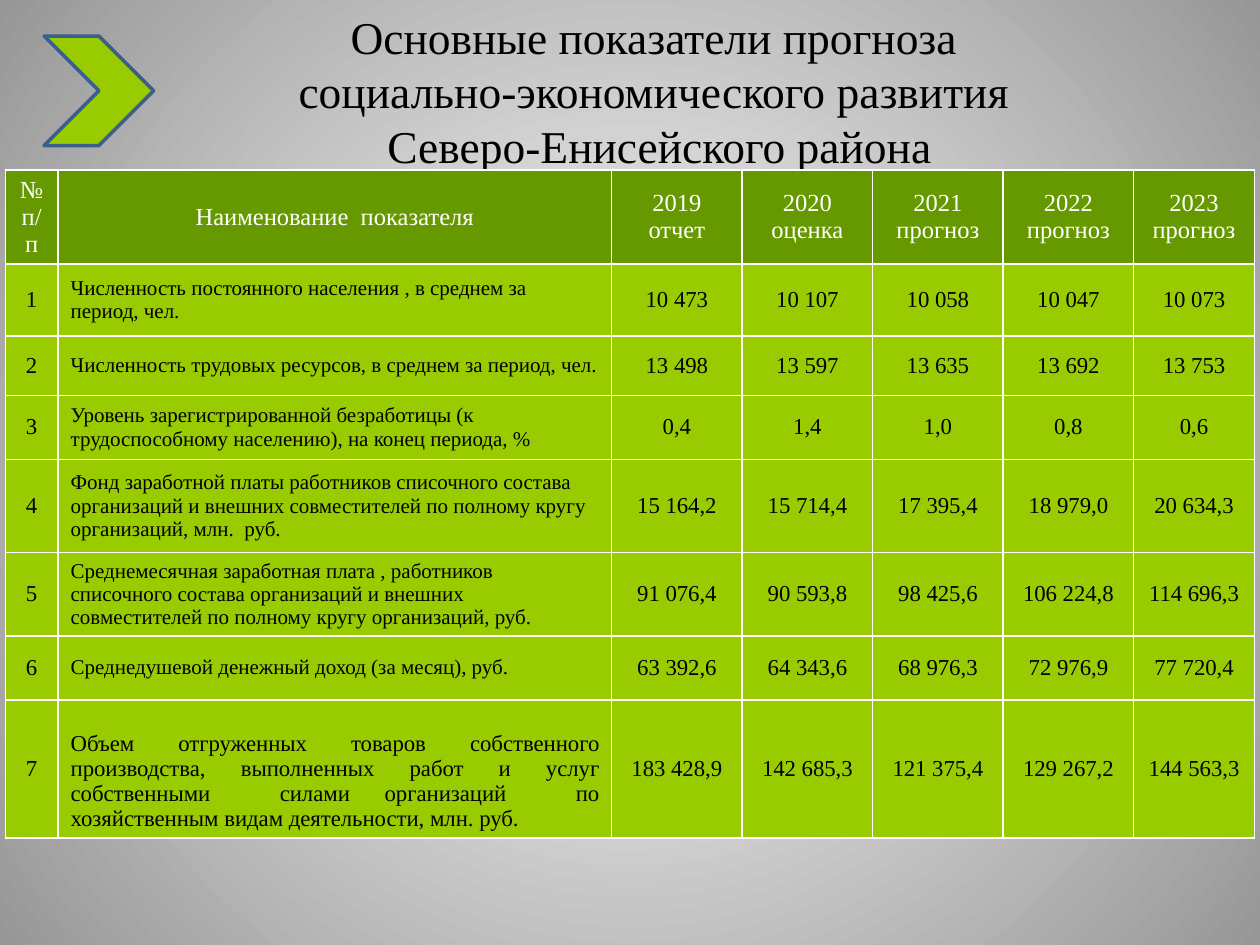
from lxml import etree
from pptx import Presentation
from pptx.dml.color import RGBColor
from pptx.enum.shapes import MSO_SHAPE
from pptx.enum.text import MSO_ANCHOR, PP_ALIGN
from pptx.oxml import parse_xml
from pptx.oxml.ns import nsdecls, qn
from pptx.util import Pt

FONT = "Times New Roman"
BLACK, WHITE = "000000", "FFFFFF"
GREEN, DARK = "99CC00", "669900"

TITLE = ("Основные показатели прогноза \n"
         "социально-экономического развития \n"
         "Северо-Енисейского района")
HEAD = ["№ п/п", "Наименование  показателя", "2019 отчет", "2020 оценка",
        "2021 прогноз", "2022\nпрогноз", "2023\nпрогноз"]
ROWS = [
    ("Численность постоянного населения , в среднем за период, чел.",
     "10 473", "10 107", "10 058", "10 047", "10 073"),
    ("Численность трудовых ресурсов, в среднем за период, чел.",
     "13 498", "13 597", "13 635", "13 692", "13 753"),
    ("Уровень зарегистрированной безработицы (к трудоспособному населению), "
     "на конец периода, %",
     "0,4", "1,4", "1,0", "0,8", "0,6"),
    ("Фонд заработной платы работников списочного состава организаций и "
     "внешних совместителей по полному кругу организаций, млн.  руб.",
     "15 164,2", "15 714,4", "17 395,4", "18 979,0", "20 634,3"),
    ("Среднемесячная заработная плата , работников списочного состава "
     "организаций и внешних совместителей по полному кругу организаций, руб.",
     "91 076,4", "90 593,8", "98 425,6", "106 224,8", "114 696,3"),
    ("Среднедушевой денежный доход (за месяц), руб.",
     "63 392,6", "64 343,6", "68 976,3", "72 976,9", "77 720,4"),
    ("Объем отгруженных товаров собственного производства, выполненных работ "
     "и услуг собственными  силами организаций  по хозяйственным видам "
     "деятельности, млн. руб.",
     "183 428,9", "142 685,3", "121 375,4", "129 267,2", "144 563,3"),
]
WIDTHS = [30.2, 316.3, 74.6, 74.6, 74.6, 74.6, 69]
HEIGHTS = [53.7, 41, 34, 36.7, 53.3, 47.5, 36.7, 78.8]


def color(code):
    return RGBColor.from_string(code)


def write(frame, text, size=13, ink=BLACK, align=PP_ALIGN.CENTER):
    """Fill a text frame, one paragraph for each line."""
    for i, line in enumerate(text.split("\n")):
        para = frame.add_paragraph() if i else frame.paragraphs[0]
        para.alignment = align
        run = para.add_run()
        run.text = line
        run.font.name = FONT
        run.font.size = Pt(size)
        run.font.color.rgb = color(ink)


def paint_back(slide):
    """Radial gradient, white in the centre and grey at the edges."""
    fill = slide.background.fill
    fill.gradient()
    for stop, pos, code in zip(fill.gradient_stops, (0, 1), (WHITE, "979797")):
        stop.position = pos
        stop.color.rgb = color(code)
    grad = next(slide.element.iter(qn("a:gradFill")))
    lin = grad.find(qn("a:lin"))
    grad.replace(lin, parse_xml(
        f'<a:path {nsdecls("a")} path="circle">'
        '<a:fillToRect l="50000" t="50000" r="50000" b="50000"/></a:path>'))


def add_title(slide, left, top, width, height):
    title = slide.shapes.title
    title.left, title.top = Pt(left), Pt(top)
    title.width, title.height = Pt(width), Pt(height)
    frame = title.text_frame
    frame.word_wrap = True
    frame.vertical_anchor = MSO_ANCHOR.TOP
    write(frame, TITLE, size=26)


def edge(cell, code, width):
    """Draw all four borders of a cell."""
    props = cell._tc.get_or_add_tcPr()
    for i, tag in enumerate(("a:lnL", "a:lnR", "a:lnT", "a:lnB")):
        line = etree.Element(qn(tag), w=str(Pt(width)))
        solid = etree.SubElement(line, qn("a:solidFill"))
        etree.SubElement(solid, qn("a:srgbClr"), val=code)
        props.insert(i, line)


def set_cell(cell, text, fill, anchor=MSO_ANCHOR.MIDDLE, **form):
    cell.fill.solid()
    cell.fill.fore_color.rgb = color(fill)
    cell.vertical_anchor = anchor
    edge(cell, WHITE, 1)
    write(cell.text_frame, text, **form)


def add_grid(slide, left, top):
    """Table of the indicators by year."""
    table = slide.shapes.add_table(
        len(HEIGHTS), len(WIDTHS), Pt(left), Pt(top),
        Pt(sum(WIDTHS)), Pt(sum(HEIGHTS))).table
    for col, width in zip(table.columns, WIDTHS):
        col.width = Pt(width)
    for row, height in zip(table.rows, HEIGHTS):
        row.height = Pt(height)
    for c, text in enumerate(HEAD):
        set_cell(table.cell(0, c), text, DARK, size=14, ink=WHITE)
    for r, (name, *values) in enumerate(ROWS, 1):
        set_cell(table.cell(r, 0), str(r), GREEN)
        if r == len(ROWS):
            form = dict(anchor=MSO_ANCHOR.BOTTOM, align=PP_ALIGN.JUSTIFY)
        else:
            form = dict(size=12, align=PP_ALIGN.LEFT)
        set_cell(table.cell(r, 1), name, GREEN, **form)
        for c, value in enumerate(values, 2):
            set_cell(table.cell(r, c), value, GREEN)


def add_arrow(slide, left, top, side):
    arrow = slide.shapes.add_shape(
        MSO_SHAPE.CHEVRON, Pt(left), Pt(top), Pt(side), Pt(side))
    arrow.shadow.inherit = False
    arrow.fill.solid()
    arrow.fill.fore_color.rgb = color(GREEN)
    arrow.line.color.rgb = color("3A5F8C")
    arrow.line.width = Pt(2)


def main():
    deck = Presentation()
    deck.slide_width, deck.slide_height = Pt(720), Pt(540)
    slide = deck.slides.add_slide(deck.slide_layouts[5])
    paint_back(slide)
    add_title(slide, 54, 1.5, 646, 126)
    add_grid(slide, 3, 97.2)
    add_arrow(slide, 25.2, 20.6, 62.6)
    deck.save("out.pptx")


if __name__ == "__main__":
    main()
